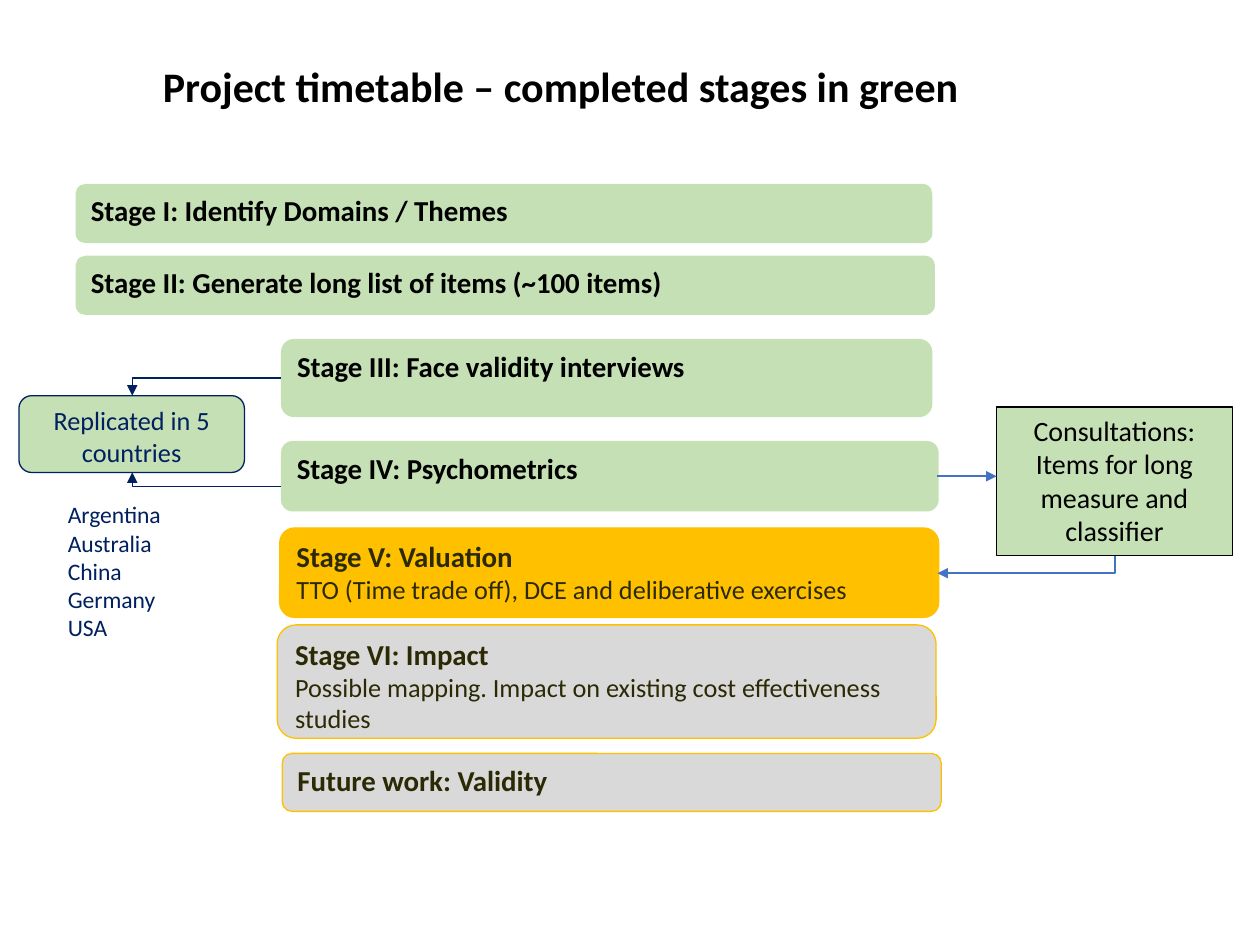
from lxml.etree import SubElement
from pptx import Presentation
from pptx.dml.color import RGBColor
from pptx.enum.shapes import MSO_CONNECTOR as Link, MSO_SHAPE as Shape
from pptx.enum.text import MSO_ANCHOR as Anchor, PP_ALIGN as Align
from pptx.oxml.ns import qn
from pptx.util import Inches, Pt

BLACK = RGBColor(0x00, 0x00, 0x00)
OLIVE = RGBColor(0x2B, 0x2A, 0x05)
NAVY = RGBColor(0x00, 0x20, 0x60)
BLUE = RGBColor(0x44, 0x72, 0xC4)
GREEN = RGBColor(0xC5, 0xE0, 0xB4)
AMBER = RGBColor(0xFF, 0xC0, 0x00)
GRAY = RGBColor(0xD9, 0xD9, 0xD9)

TITLE = "Project timetable – completed stages in green"
COUNTRIES = ["Argentina", "Australia", "China", "Germany", "USA"]
HEADING_SIZE, DETAIL_SIZE = 16.5, 15

DONE = (Shape.FLOWCHART_ALTERNATE_PROCESS, GREEN, None, BLACK)
CURRENT = (Shape.ROUNDED_RECTANGLE, AMBER, AMBER, OLIVE)
PLANNED = (Shape.ROUNDED_RECTANGLE, GRAY, AMBER, OLIVE)

# (left, top, width, height), look, heading, detail
STAGES = [
    ((0.6, 1.46, 6.8, 0.47), DONE, "Stage I: Identify Domains / Themes", None),
    ((0.6, 2.03, 6.82, 0.47), DONE,
     "Stage II: Generate long list of items (~100 items)", None),
    ((2.23, 2.69, 5.17, 0.62), DONE, "Stage III: Face validity interviews", None),
    ((2.23, 3.5, 5.22, 0.56), DONE, "Stage IV: Psychometrics", None),
    ((2.22, 4.19, 5.23, 0.71), CURRENT, "Stage V: Valuation",
     "TTO (Time trade off), DCE and deliberative exercises"),
    ((2.2, 4.96, 5.23, 0.9), PLANNED, "Stage VI: Impact",
     "Possible mapping. Impact on existing cost effectiveness studies"),
    ((2.24, 5.98, 5.23, 0.46), PLANNED, "Future work: Validity", None),
]


class Page:
    def __init__(self, deck, font="Calibri"):
        self.slide = deck.slides.add_slide(deck.slide_layouts[5])
        self.font = font

    def fill_text(self, box, lines, color, align=Align.LEFT, anchor=Anchor.TOP,
                  wrap=True):
        """Fill a box with one paragraph per (text, size, bold) line."""
        frame = box.text_frame
        frame.word_wrap = wrap
        frame.vertical_anchor = anchor
        for index, (text, size, bold) in enumerate(lines):
            para = frame.add_paragraph() if index else frame.paragraphs[0]
            para.alignment = align
            span = para.add_run()
            span.text = text
            looks = {"name": self.font, "size": Pt(size), "bold": bold}
            for name, value in looks.items():
                setattr(span.font, name, value)
            span.font.color.rgb = color

    def title(self, text, area):
        box = self.slide.shapes.title
        for name, value in zip(("left", "top", "width", "height"), area):
            setattr(box, name, Inches(value))
        self.fill_text(box, [(text, 24, True)], BLACK, Align.CENTER,
                       Anchor.MIDDLE)

    def block(self, area, look, lines, align=Align.LEFT):
        kind, fill, line, color = look
        box = self.slide.shapes.add_shape(kind, *map(Inches, area))
        box.shadow.inherit = False
        box.fill.solid()
        box.fill.fore_color.rgb = fill
        if line is None:
            box.line.fill.background()
        else:
            box.line.color.rgb = line
            box.line.width = Pt(0.75)
        self.fill_text(box, lines, color, align)
        return box

    def text(self, area, lines, color):
        box = self.slide.shapes.add_textbox(*map(Inches, area))
        self.fill_text(box, lines, color, wrap=False)

    def arrow(self, start, end, color, width, bent=False, arrow_end="tailEnd"):
        """Draw an arrow; a bent one runs level first, then upright."""
        link = self.slide.shapes.add_connector(
            Link.ELBOW if bent else Link.STRAIGHT, *map(Inches, start + end))
        link.line.color.rgb = color
        link.line.width = Pt(width)
        properties = link._element.spPr
        if bent:
            properties.find(qn("a:prstGeom")).set("prst", "bentConnector2")
        outline = properties.find(qn("a:ln"))
        SubElement(outline, qn(f"a:{arrow_end}"), type="triangle")
        SubElement(properties, qn("a:effectLst"))


def main():
    deck = Presentation()
    deck.slide_width, deck.slide_height = Inches(10), Inches(7.5)
    page = Page(deck)
    page.title(TITLE, (0.44, 0.28, 8.02, 0.8))

    for area, look, heading, detail in STAGES:
        lines = [(heading, HEADING_SIZE, True)]
        if detail:
            lines.append((detail, DETAIL_SIZE, False))
        page.block(area, look, lines)

    replicated = page.block(
        (0.15, 3.14, 1.79, 0.61), (Shape.ROUNDED_RECTANGLE, GREEN, NAVY, NAVY),
        [("Replicated in 5 countries", DETAIL_SIZE, False)], Align.CENTER)
    margins = {"left": 0.07, "top": 0.04, "right": 0.07, "bottom": 0.04}
    for side, value in margins.items():
        setattr(replicated.text_frame, f"margin_{side}", Inches(value))
    page.text((0.44, 3.92, 0.95, 1.24),
              [(country, 13.5, False) for country in COUNTRIES], NAVY)
    page.block(
        (7.91, 3.23, 1.87, 1.18), (Shape.RECTANGLE, GREEN, BLACK, BLACK),
        [("Consultations: Items for long measure and classifier", 16, False)],
        Align.CENTER)

    page.arrow((2.23, 3), (1.05, 3.14), NAVY, 0.75, bent=True)
    page.arrow((2.23, 3.86), (1.05, 3.75), NAVY, 0.75, bent=True)
    page.arrow((7.44, 3.78), (7.91, 3.78), BLUE, 1)
    page.arrow((7.44, 4.55), (8.85, 4.41), BLUE, 1, bent=True,
               arrow_end="headEnd")
    deck.save("out.pptx")


if __name__ == "__main__":
    main()
